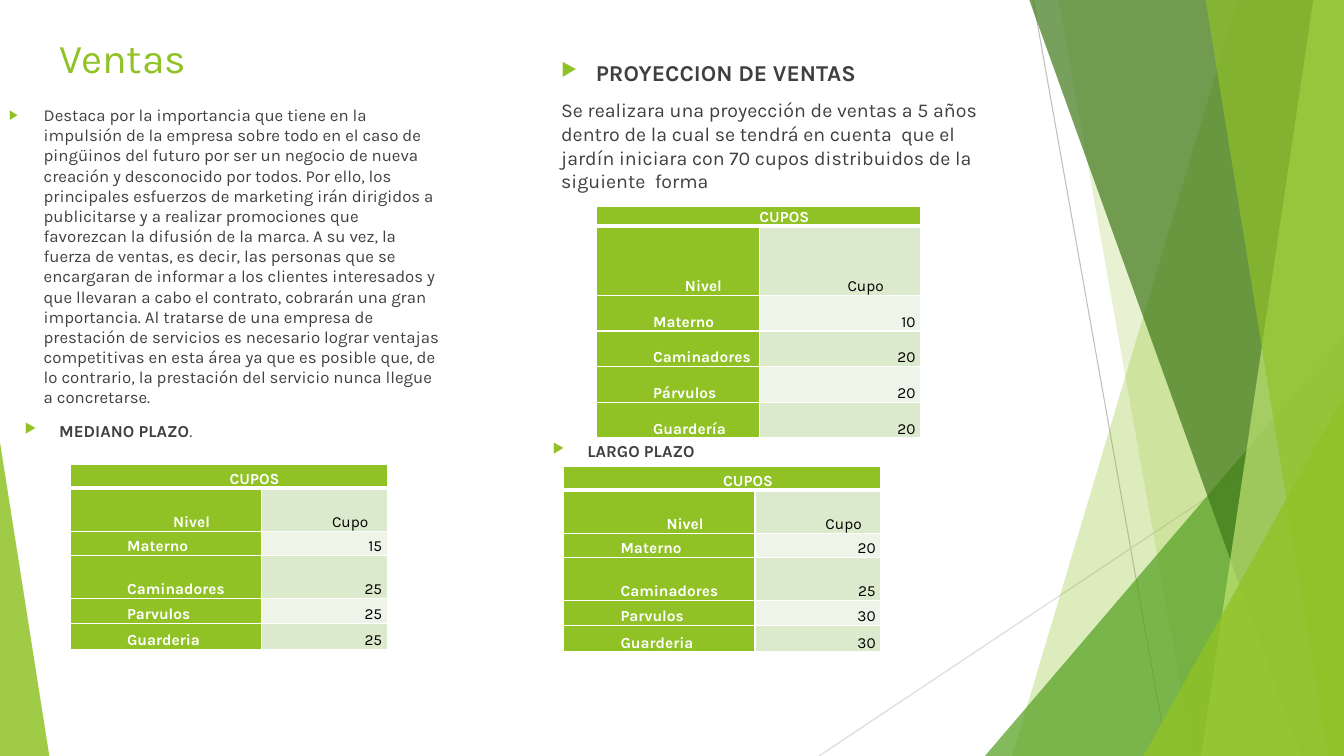
from dataclasses import dataclass

from lxml.etree import SubElement
from pptx import Presentation
from pptx.dml.color import RGBColor
from pptx.enum.shapes import MSO_CONNECTOR, MSO_SHAPE
from pptx.enum.text import MSO_ANCHOR, MSO_AUTO_SIZE, PP_ALIGN
from pptx.oxml.ns import qn
from pptx.shapes.autoshape import Shape
from pptx.slide import Slide
from pptx.table import _Cell
from pptx.text.text import TextFrame, _Paragraph
from pptx.util import Emu, Pt

PX = 9525
WIDE, HIGH = 1280, 720
FONT = "Karla"

LEFT, MID, RIGHT = PP_ALIGN.LEFT, PP_ALIGN.CENTER, PP_ALIGN.RIGHT
TOP, BOTTOM = MSO_ANCHOR.TOP, MSO_ANCHOR.BOTTOM
FIXED = MSO_AUTO_SIZE.NONE
LINE = MSO_CONNECTOR.STRAIGHT
TRIANGLE = MSO_SHAPE.ISOSCELES_TRIANGLE

LIME = RGBColor(0x90, 0xC2, 0x26)
LEAF = RGBColor(0x54, 0xA0, 0x21)
PINE = RGBColor(0x3F, 0x78, 0x19)
PALE = RGBColor(0xC0, 0xE4, 0x74)
INK = RGBColor(0x40, 0x40, 0x40)
BLACK = RGBColor(0, 0, 0)
WHITE = RGBColor(0xFF, 0xFF, 0xFF)
BANDS = RGBColor(0xDB, 0xE9, 0xCD), RGBColor(0xEE, 0xF4, 0xE8)
GREY = RGBColor(0xBF, 0xBF, 0xBF)
SILVER = RGBColor(0xD9, 0xD9, 0xD9)


@dataclass
class Ray:
    start: tuple[int, int]
    end: tuple[int, int]
    color: RGBColor


@dataclass
class Panel:
    """A band that reaches the right edge; its left side slants from head to foot."""
    head: int
    foot: int
    color: RGBColor
    alpha: int


@dataclass
class Wedge:
    box: tuple[int, int, int, int]
    tip: int
    color: RGBColor
    alpha: int


@dataclass
class Quota:
    left: int
    top: int
    cols: tuple[int, ...]
    rows: tuple[int, ...]
    names: tuple[str, ...]
    seats: tuple[int, ...]


RAYS = [Ray((984, 0), (1112, HIGH), GREY), Ray((WIDE, 387), (780, HIGH), SILVER)]

SHARDS = [
    Panel(1179, 964, LIME, 30),
    Panel(1008, 1136, LIME, 20),
    Wedge((938, 320, 342, 400), 1, LEAF, 72),
    Panel(980, 1239, PINE, 70),
    Panel(1251, 1144, PALE, 70),
    Panel(1148, 1265, LIME, 65),
    Wedge((1089, 377, 191, 343), 1, LIME, 80),
    Wedge((0, 421, 47, 299), 0, LIME, 85),
]

SMALL = (182, 120), (23, 41, 23, 41, 24, 25)
LEVELS = "Materno", "Caminadores", "Parvulos", "Guarderia"
QUOTAS = [
    Quota(568, 197, (155, 154), (18, 66, 34, 34, 34, 34),
          ("Materno", "Caminadores", "Párvulos", "Guardería"), (10, 20, 20, 20)),
    Quota(67, 442, *SMALL, LEVELS, (15, 25, 25, 25)),
    Quota(537, 444, *SMALL, LEVELS, (20, 25, 30, 30)),
]

SALES = (
    "Destaca por la importancia que tiene en la impulsión de la empresa sobre todo "
    "en el caso de pingüinos del futuro por ser un negocio de nueva creación y "
    "desconocido por todos. Por ello, los principales esfuerzos de marketing irán "
    "dirigidos a publicitarse y a realizar promociones que favorezcan la difusión de "
    "la marca. A su vez, la fuerza de ventas, es decir, las personas que se encargaran "
    "de informar a los clientes interesados y que llevaran a cabo el contrato, "
    "cobrarán una gran importancia. Al tratarse de una empresa de prestación de "
    "servicios es necesario lograr ventajas competitivas en esta área ya que es "
    "posible que, de lo contrario, la prestación del servicio nunca llegue a "
    "concretarse."
)
FORECAST = (
    "Se realizara una proyección de ventas a 5 años dentro de la cual se tendrá en "
    "cuenta  que el jardín iniciara con 70 cupos distribuidos de la siguiente  forma"
)


def write(para: _Paragraph, text: str, *, size: float = 12, color: RGBColor = INK,
          bold: bool = False, align: PP_ALIGN = LEFT, before: float = 9,
          pitch: float = 1, bullet: bool = False) -> None:
    para.alignment, para.space_before, para.line_spacing = align, Pt(before), pitch
    run = para.add_run()
    run.text = text
    font = run.font
    font.name, font.size, font.bold = FONT, Pt(size), bold
    font.color.rgb = color
    if bullet:
        props = indent(para, 33, -33)
        SubElement(SubElement(props, qn("a:buClr")), qn("a:srgbClr"), val=str(LIME))
        SubElement(props, qn("a:buSzPct"), val="80000")
        SubElement(props, qn("a:buChar"), char="▶")


def indent(para: _Paragraph, margin: int, first: int):
    props = para._p.get_or_add_pPr()
    props.set("marL", str(margin * PX))
    props.set("indent", str(first * PX))
    return props


def place(shape: Shape, left: int, top: int, width: int, height: int) -> TextFrame:
    shape.left, shape.top = Emu(left * PX), Emu(top * PX)
    shape.width, shape.height = Emu(width * PX), Emu(height * PX)
    frame = shape.text_frame
    frame.word_wrap, frame.auto_size, frame.vertical_anchor = True, FIXED, TOP
    return frame


def box(slide: Slide, left: int, top: int, width: int, height: int) -> TextFrame:
    return place(slide.shapes.add_textbox(0, 0, 0, 0), left, top, width, height)


def draw_ray(slide: Slide, ray: Ray) -> None:
    ends = [Emu(n * PX) for n in ray.start + ray.end]
    link = slide.shapes.add_connector(LINE, *ends)
    link.line.color.rgb, link.line.width = ray.color, Pt(0.75)
    SubElement(link.element.spPr, qn("a:effectLst"))


def draw_shard(slide: Slide, shard: Panel | Wedge) -> None:
    if isinstance(shard, Panel):
        pen = slide.shapes.build_freeform(shard.head, -1, scale=PX)
        pen.add_line_segments([(WIDE, -1), (WIDE, HIGH), (shard.foot, HIGH)])
        shape = pen.convert_to_shape()
    else:
        shape = slide.shapes.add_shape(TRIANGLE, *(Emu(n * PX) for n in shard.box))
        shape.adjustments[0] = shard.tip
    shape.shadow.inherit = False
    shape.line.fill.background()
    shape.fill.solid()
    shape.fill.fore_color.rgb = shard.color
    tint = shape.element.spPr.find(qn("a:solidFill")).find(qn("a:srgbClr"))
    SubElement(tint, qn("a:alpha"), val=str(shard.alpha * 1000))


def edge(cell: _Cell, row: int) -> None:
    """Give the cell white borders, thick between the heading and the next row."""
    props = cell._tc.get_or_add_tcPr()
    thick = {"lnB": row == 0, "lnT": row == 1}
    for spot, side in enumerate(("lnL", "lnR", "lnT", "lnB")):
        width = Pt(3 if thick.get(side) else 1)
        line = SubElement(props, qn(f"a:{side}"), w=str(width))
        SubElement(SubElement(line, qn("a:solidFill")), qn("a:srgbClr"), val=str(WHITE))
        props.insert(spot, line)


def draw_quota(slide: Slide, quota: Quota) -> None:
    size = (quota.left, quota.top, sum(quota.cols), sum(quota.rows))
    table = slide.shapes.add_table(len(quota.rows), len(quota.cols),
                                   *(Emu(n * PX) for n in size)).table
    table.first_row = table.horz_banding = False
    for part, width in zip(table.columns, quota.cols):
        part.width = Emu(width * PX)
    for part, height in zip(table.rows, quota.rows):
        part.height = Emu(height * PX)
    table.cell(0, 0).merge(table.cell(0, 1))
    lines = [("CUPOS", ""), ("Nivel", "Cupo"), *zip(quota.names, quota.seats)]
    for row, line in enumerate(lines):
        for col, text in enumerate(line):
            cell = table.cell(row, col)
            cell.margin_left = cell.margin_right = Emu(5 * PX)
            cell.margin_top = cell.margin_bottom = 0
            cell.vertical_anchor = BOTTOM
            label = row == 0 or col == 0
            cell.fill.solid()
            cell.fill.fore_color.rgb = LIME if label else BANDS[(row - 1) % 2]
            edge(cell, row)
            if cell.is_spanned:
                continue
            para = cell.text_frame.paragraphs[0]
            indent(para, 48, 1)
            write(para, str(text), size=11, color=WHITE if label else BLACK, bold=label,
                  align=MID if row < 2 else (LEFT, RIGHT)[col], before=0, pitch=1.07)


def main() -> None:
    deck = Presentation()
    deck.slide_width, deck.slide_height = Emu(WIDE * PX), Emu(HIGH * PX)
    slide = deck.slides.add_slide(deck.slide_layouts[1])
    title, body = slide.placeholders
    for ray in RAYS:
        draw_ray(slide, ray)
    for shard in SHARDS:
        draw_shard(slide, shard)
    for holder in (title, body):
        slide.shapes.element.append(holder.element)

    frame = place(title, 47, 26, 489, 51)
    write(frame.paragraphs[0], "Ventas", size=29.2, color=LIME, before=0)
    frame = place(body, -1, 95, 433, 300)
    write(frame.paragraphs[0], SALES, bullet=True)
    frame = box(slide, 525, 51, 433, 365)
    write(frame.paragraphs[0], "PROYECCION DE VENTAS", size=16.2, bold=True, bullet=True)
    write(frame.add_paragraph(), FORECAST, size=14)
    para = box(slide, 14, 396, 433, 300).paragraphs[0]
    write(para, "MEDIANO PLAZO", bold=True, bullet=True)
    write(para, ".")
    para = box(slide, 517, 415, 433, 300).paragraphs[0]
    write(para, "LARGO PLAZO", bold=True, bullet=True)
    for quota in QUOTAS:
        draw_quota(slide, quota)
    deck.save("out.pptx")


if __name__ == "__main__":
    main()
